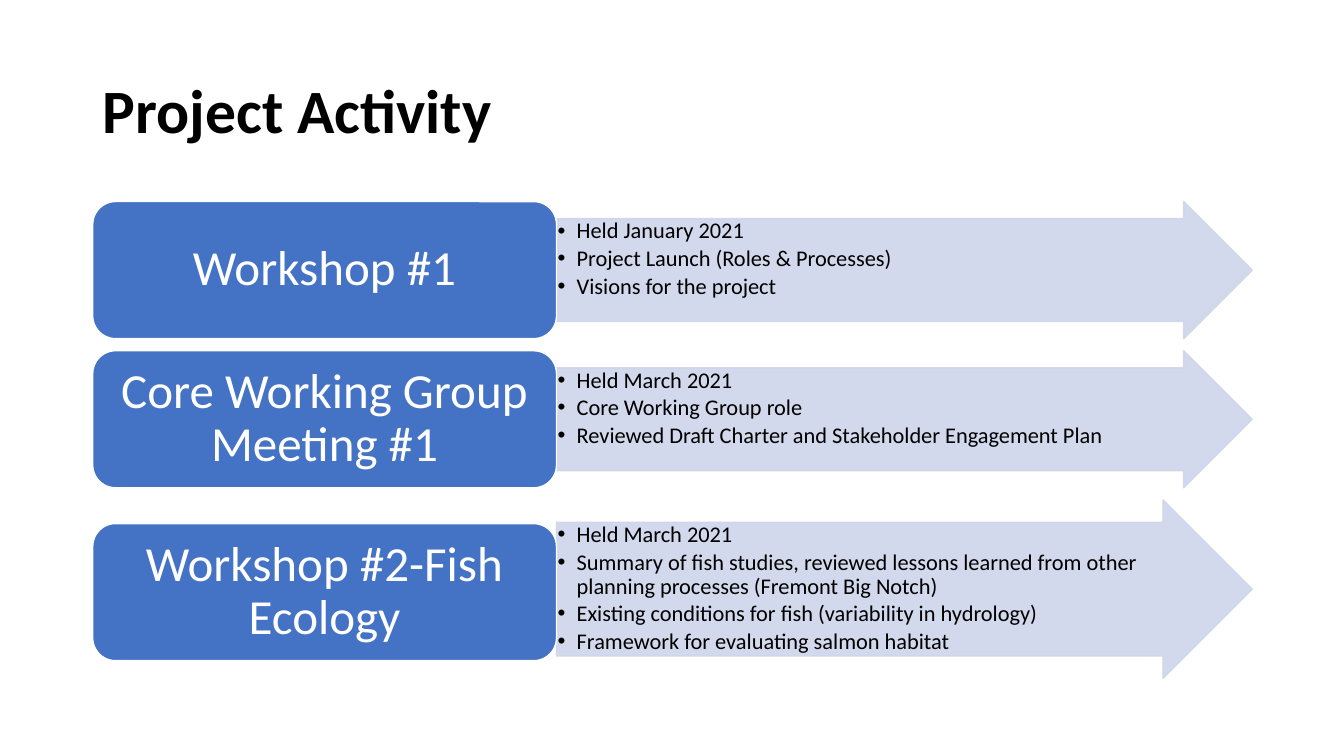
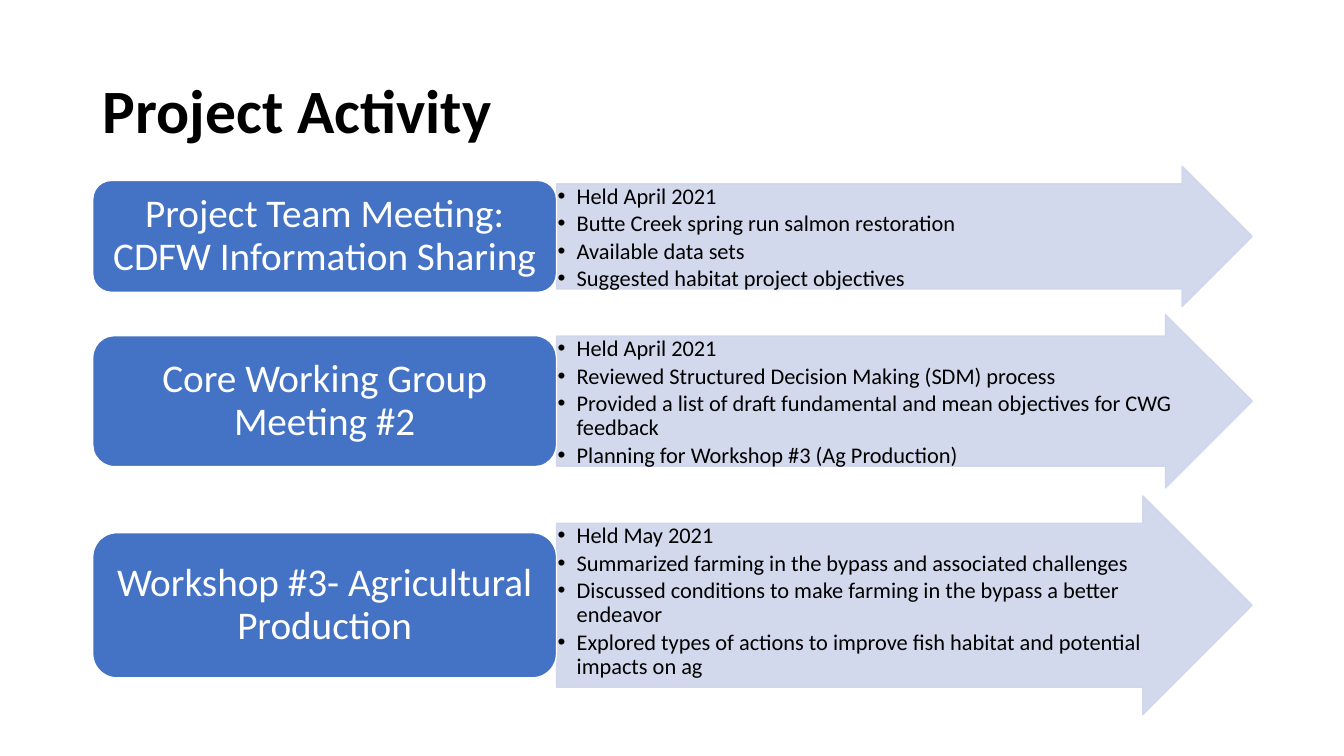
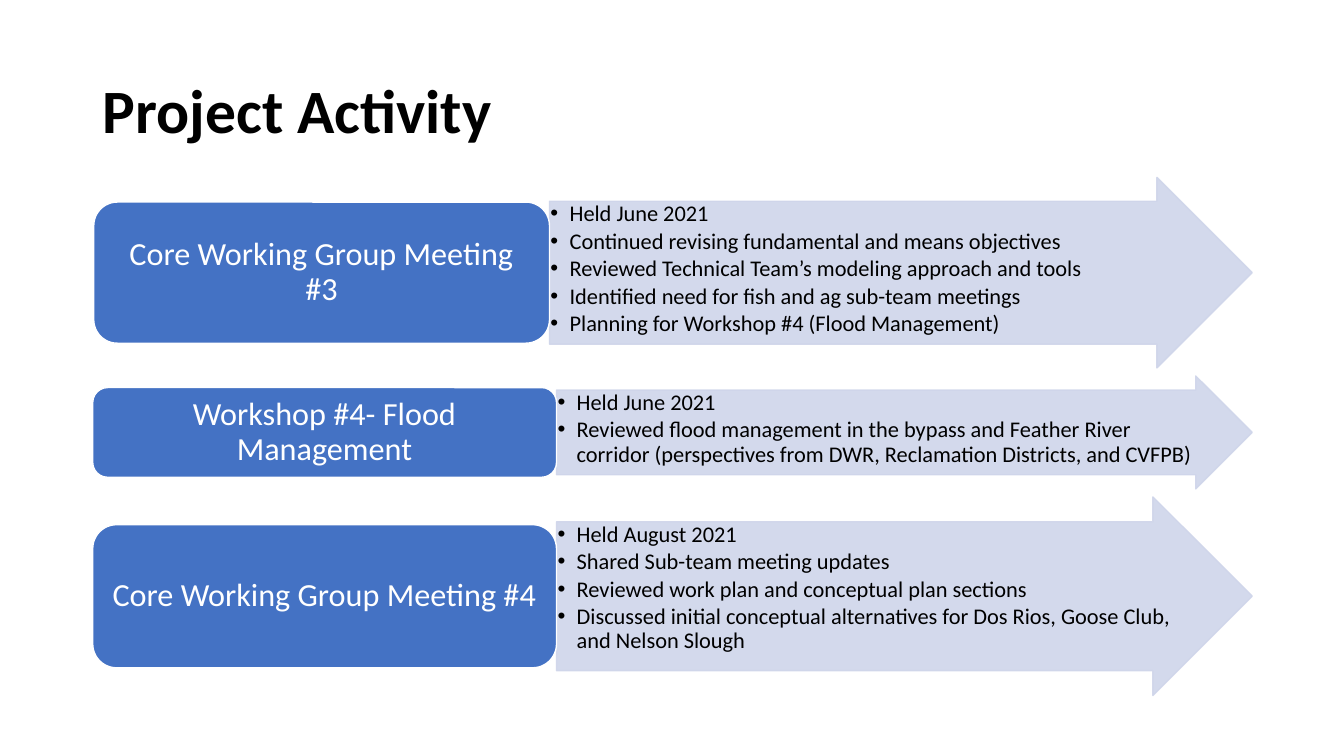
from dataclasses import dataclass

from lxml import etree
from pptx import Presentation
from pptx.dml.color import RGBColor
from pptx.enum.shapes import MSO_SHAPE
from pptx.enum.text import MSO_ANCHOR, PP_ALIGN
from pptx.oxml.ns import qn
from pptx.util import Inches, Pt

ARROW, ROUNDED = MSO_SHAPE.RIGHT_ARROW, MSO_SHAPE.ROUNDED_RECTANGLE
TOP, MIDDLE = MSO_ANCHOR.TOP, MSO_ANCHOR.MIDDLE
LEFT, CENTER = PP_ALIGN.LEFT, PP_ALIGN.CENTER


@dataclass(frozen=True)
class Theme:
    font: str = "Calibri"
    black: RGBColor = RGBColor(0x00, 0x00, 0x00)
    white: RGBColor = RGBColor(0xFF, 0xFF, 0xFF)
    blue: RGBColor = RGBColor(0x44, 0x72, 0xC4)
    pale: RGBColor = RGBColor(0xCF, 0xD5, 0xEA)
    pale_opacity: int = 90
    title_size: int = 44
    bullet_size: int = 16
    line_spacing: float = 0.9
    line_width: int = 1


@dataclass(frozen=True)
class Activity:
    """One label with its arrow; heights and offsets are in inches."""
    label: str
    arrow_h: float
    label_h: float
    bullets: tuple
    left: float = 0.92
    split: float = 5.52
    label_shift: float = 0


@dataclass(frozen=True)
class ActivitySlide:
    top: float
    gap: float
    label_size: int
    activities: tuple


THEME = Theme()
RIGHT = 12.42
TITLE = "Project Activity"

SLIDES = (
    ActivitySlide(2, 0.12, 35, (
        Activity("Workshop #1", 1.36, 1.36, (
            "Held January 2021",
            "Project Launch (Roles & Processes)",
            "Visions for the project")),
        Activity("Core Working Group Meeting #1", 1.36, 1.36, (
            "Held March 2021",
            "Core Working Group role",
            "Reviewed Draft Charter and Stakeholder Engagement Plan")),
        Activity("Workshop #2-Fish Ecology", 1.77, 1.36, (
            "Held March 2021",
            "Summary of fish studies, reviewed lessons learned from other "
            "planning processes (Fremont Big Notch)",
            "Existing conditions for fish (variability in hydrology)",
            "Framework for evaluating salmon habitat"), label_shift=0.03),
    )),
    ActivitySlide(1.65, 0.08, 28, (
        Activity("Project Team Meeting: CDFW Information Sharing", 1.39, 1.11, (
            "Held April 2021",
            "Butte Creek spring run salmon restoration",
            "Available data sets",
            "Suggested habitat project objectives")),
        Activity("Core Working Group Meeting #2", 1.72, 1.3, (
            "Held April 2021",
            "Reviewed Structured Decision Making (SDM) process",
            "Provided a list of draft fundamental and mean objectives for CWG "
            "feedback",
            "Planning for Workshop #3 (Ag Production)")),
        Activity("Workshop #3- Agricultural Production", 2.17, 1.44, (
            "Held May 2021",
            "Summarized farming in the bypass and associated challenges",
            "Discussed conditions to make farming in the bypass a better "
            "endeavor",
            "Explored types of actions to improve fish habitat and potential "
            "impacts on ag")),
    )),
    ActivitySlide(1.76, 0.08, 23, (
        Activity("Core Working Group Meeting #3", 1.89, 1.4, (
            "Held June 2021",
            "Continued revising fundamental and means objectives",
            "Reviewed Technical Team’s modeling approach and tools",
            "Identified need for fish and ag sub-team meetings",
            "Planning for Workshop #4 (Flood Management)"),
            left=0.93, split=5.45),
        Activity("Workshop #4- Flood Management", 1.12, 0.89, (
            "Held June 2021",
            "Reviewed flood management in the bypass and Feather River "
            "corridor (perspectives from DWR, Reclamation Districts, and "
            "CVFPB)")),
        Activity("Core Working Group Meeting #4", 1.97, 1.42, (
            "Held August 2021",
            "Shared Sub-team meeting updates",
            "Reviewed work plan and conceptual plan sections",
            "Discussed initial conceptual alternatives for Dos Rios, Goose "
            "Club, and Nelson Slough")),
    )),
)


def set_opacity(sp, percent):
    """Apply the opacity to the fill and the outline of a shape."""
    for color in sp._element.spPr.iter(qn("a:srgbClr")):
        etree.SubElement(color, qn("a:alpha"), val=str(percent * 1000))


def add_bullet(p):
    pPr = p._p.get_or_add_pPr()
    indent = Inches(0.19)
    pPr.set("marL", str(indent))
    pPr.set("indent", str(-indent))
    etree.SubElement(pPr, qn("a:buFont"), typeface="Arial")
    etree.SubElement(pPr, qn("a:buChar"), char="•")


def write(sp, lines, size, color, inset_x, inset_y, anchor=MIDDLE,
          align=LEFT, bold=False, bullets=False):
    tf = sp.text_frame
    tf.word_wrap = True
    tf.vertical_anchor = anchor
    tf.margin_left = tf.margin_right = Inches(inset_x)
    tf.margin_top = tf.margin_bottom = Inches(inset_y)
    tf.text = "\n".join(lines)
    for p in tf.paragraphs:
        p.alignment = align
        p.line_spacing = THEME.line_spacing
        if bullets:
            p.space_after = Pt(size * 0.15)
            add_bullet(p)
        for r in p.runs:
            r.font.name = THEME.font
            r.font.size = Pt(size)
            r.font.bold = bold
            r.font.color.rgb = color


def add_block(slide, preset, x, y, w, h, fill, line):
    sp = slide.shapes.add_shape(preset, Inches(x), Inches(y), Inches(w), Inches(h))
    sp.shadow.inherit = False
    sp.fill.solid()
    sp.fill.fore_color.rgb = fill
    sp.line.color.rgb = line
    sp.line.width = Pt(THEME.line_width)
    return sp


def add_title(slide, x, y, w, h):
    sp = slide.shapes.add_textbox(Inches(x), Inches(y), Inches(w), Inches(h))
    write(sp, [TITLE], THEME.title_size, THEME.black, 0.1, 0.05, bold=True)


def add_arrow(slide, x, y, w, h, bullets):
    sp = add_block(slide, ARROW, x, y, w, h, THEME.pale, THEME.pale)
    sp.adjustments[0] = 0.75
    sp.adjustments[1] = 0.5
    set_opacity(sp, THEME.pale_opacity)
    write(sp, bullets, THEME.bullet_size, THEME.black, 0.01, 0.01,
          anchor=TOP, bullets=True)


def add_label(slide, x, y, w, h, text, size):
    sp = add_block(slide, ROUNDED, x, y, w, h, THEME.blue, THEME.white)
    inset = size * 0.3 / 72
    write(sp, [text], size, THEME.white, inset, inset / 2, align=CENTER)


def add_activity(slide, top, activity, label_size):
    """Place an arrow at top, with its label centred beside it."""
    a = activity
    add_arrow(slide, a.split, top, RIGHT - a.split, a.arrow_h, a.bullets)
    label_top = top + (a.arrow_h - a.label_h) / 2 + a.label_shift
    add_label(slide, a.left, label_top, a.split - a.left, a.label_h,
              a.label, label_size)


def add_activity_slide(prs, content):
    slide = prs.slides.add_slide(prs.slide_layouts[6])
    add_title(slide, 0.92, 0.4, 11.5, 1.45)
    top = content.top
    for activity in content.activities:
        add_activity(slide, top, activity, content.label_size)
        top += activity.arrow_h + content.gap


def main():
    prs = Presentation()
    prs.slide_width, prs.slide_height = Inches(13.33), Inches(7.5)
    for content in SLIDES:
        add_activity_slide(prs, content)
    prs.save("out.pptx")


if __name__ == "__main__":
    main()
